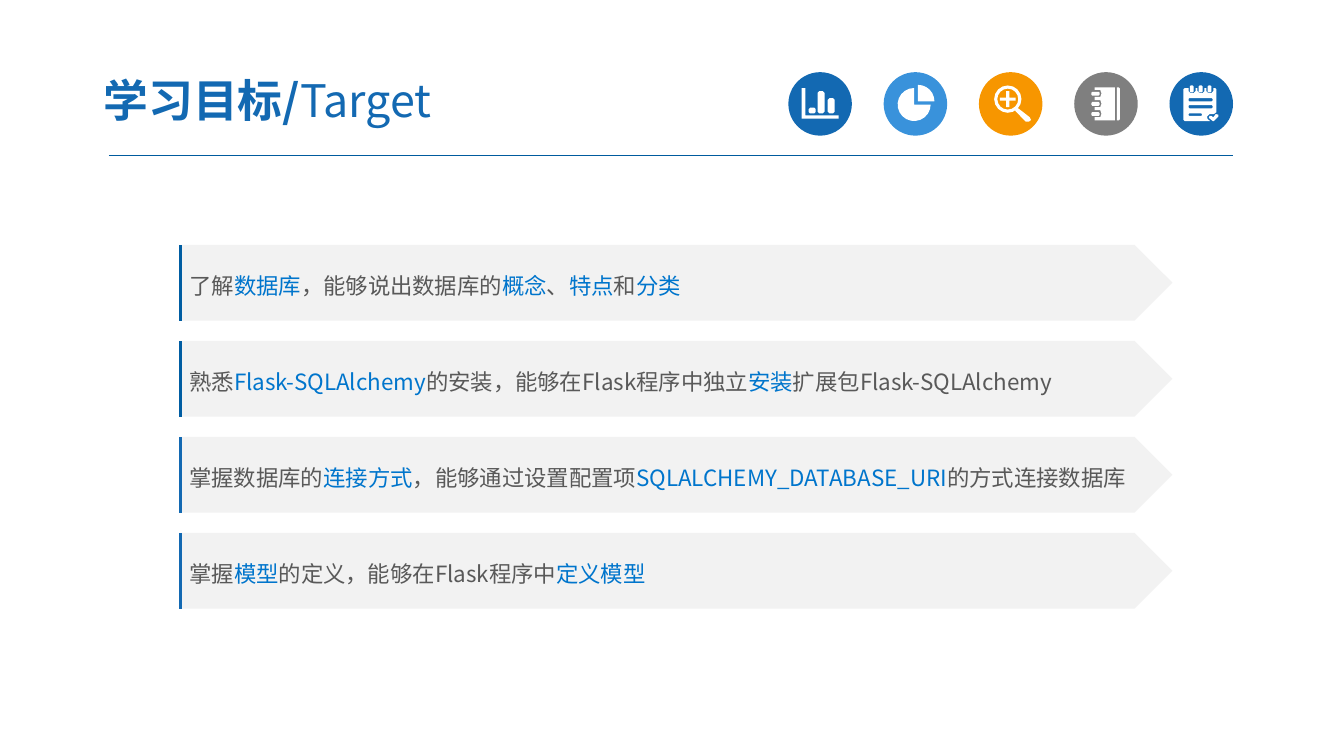
import math
import pptx
import pptx.util
import pptx.dml.color
import pptx.enum.shapes
import pptx.enum.text
import pptx.oxml.ns
import lxml.etree

WIDE = pptx.util.Inches(13.33)
HIGH = pptx.util.Inches(7.5)
FONT = "Noto Sans CJK SC"
BLUE, SKY, GOLD, GREY, WHITE = "1369B2", "3992DB", "F79600", "7F7F7F", "FFFFFF"
KIND = pptx.enum.shapes.MSO_SHAPE

GOALS = [
    ("005DA2", "了解|数据库|，能够说出数据库的|概念|、|特点|和|分类"),
    ("005DA2", "熟悉|Flask-SQLAlchemy|的安装，能够在Flask程序中独立|安装|扩展包Flask-SQLAlchemy"),
    (BLUE, "掌握数据库的|连接方式|，能够通过设置配置项|SQLALCHEMY_DATABASE_URI|的方式连接数据库"),
    (BLUE, "掌握|模型|的定义，能够在Flask程序中|定义模型"),
]


def hue(code):
    return pptx.dml.color.RGBColor.from_string(code)


def across(share):
    return int(WIDE * share / 100)


def down(share):
    return int(HIGH * share / 100)


def bar(x, y, wide, high):
    cut = min(wide, high) / 4
    return [(x + cut, y), (x + wide - cut, y), (x + wide, y + cut),
            (x + wide, y + high - cut), (x + wide - cut, y + high),
            (x + cut, y + high), (x, y + high - cut), (x, y + cut)]


def arc(x, y, reach, start=0, sweep=360, steps=16):
    turns = [math.radians(start + sweep * n / steps) for n in range(steps + 1)]
    return [(x + reach * math.cos(t), y + reach * math.sin(t)) for t in turns]


def chart():
    axis = [(21, 25), (27, 25), (27, 68), (79, 68), (79, 73), (21, 73)]
    return [axis, bar(32, 56, 11, 9), bar(46, 30, 11, 35), bar(62, 41, 11, 24)]


def pie():
    return [arc(48, 51, 26, 0, 270) + [(48, 51)],
            arc(54, 46, 26, 270, 90, 6) + [(54, 46)]]


def lens():
    cross = [(43, 30), (48, 30), (48, 40), (58, 40), (58, 45), (48, 45),
             (48, 55), (43, 55), (43, 45), (33, 45), (33, 40), (43, 40)]
    grip = [(57, 61), (62, 57), (80, 71), (82, 75), (79, 78), (74, 78)]
    return [arc(45.5, 42.5, 21.5), arc(45.5, 42.5, 16.5), cross, grip]


def book():
    rings = [28 + 16 * n for n in range(3)]
    body = [(32, 76), (32, 24)]
    for y in rings:
        body += [(32, y), (41, y), (43, y + 5.5), (41, y + 11), (32, y + 11)]
    cover = body[1:] + [(32, 76), (64, 76), (64, 24)]
    spine = [(67, 24), (70, 24), (72, 26), (72, 74), (70, 76), (67, 76)]
    return [cover, spine] + [bar(27, y + 3, 13, 6) for y in rings]


def note():
    rings = [30 + 14 * n for n in range(3)]
    page = [(22, 27), (24, 25)]
    for x in rings:
        page += [(x, 25), (x, 30), (x + 3, 33), (x + 8, 33), (x + 11, 30), (x + 11, 25)]
    page += [(72, 25), (74, 27), (74, 63), (70, 66), (63, 66), (59, 70),
             (60, 74), (64, 77), (24, 77), (22, 75)]
    heart = [(77, 70), (70, 77), (68, 77), (62, 72), (63, 69), (66, 69),
             (69, 71), (73, 66), (77, 67)]
    rows = [bar(30, 41, 38, 5), bar(30, 52, 38, 5), bar(30, 65, 21, 4)]
    return [page, heart] + rows + [bar(x + 2, 21, 6, 11) for x in rings]


ICONS = [(BLUE, chart), (SKY, pie), (GOLD, lens), (GREY, book), (BLUE, note)]


def paint(item, code):
    item.shadow.inherit = False
    item.fill.solid()
    item.fill.fore_color.rgb = hue(code)
    item.line.fill.background()
    return item


def line(slide, start, end, code, size):
    item = slide.shapes.add_connector(
        pptx.enum.shapes.MSO_CONNECTOR.STRAIGHT,
        across(start[0]), down(start[1]), across(end[0]), down(end[1]))
    item.line.color.rgb = hue(code)
    item.line.width = pptx.util.Pt(size)
    lxml.etree.SubElement(item._element.spPr, pptx.oxml.ns.qn("a:effectLst"))


def write(para, text, code, size, bold=False):
    run = para.add_run()
    run.text = text
    run.font.size = pptx.util.Pt(size)
    run.font.bold = bold
    run.font.color.rgb = hue(code)
    run.font.name = FONT
    east = lxml.etree.SubElement(run.font._element, pptx.oxml.ns.qn("a:ea"))
    east.set("typeface", FONT)


def title(slide):
    head = slide.shapes.title
    head.left, head.top = across(6.72), down(8.4)
    head.width, head.height = across(39.16), down(9.6)
    frame = head.text_frame
    frame.auto_size = pptx.enum.text.MSO_AUTO_SIZE.NONE
    frame.word_wrap = True
    frame.vertical_anchor = pptx.enum.text.MSO_ANCHOR.MIDDLE
    frame.margin_left = frame.margin_right = pptx.util.Inches(0.13)
    frame.margin_top = frame.margin_bottom = pptx.util.Inches(0.07)
    para = frame.paragraphs[0]
    para.alignment = pptx.enum.text.PP_ALIGN.LEFT
    para.space_before = pptx.util.Pt(0)
    write(para, "学习目标/", BLUE, 32, True)
    write(para, "Target", BLUE, 32)


def icon(slide, left, top, size, code, loops):
    home = slide.shapes.add_group_shape().shapes
    paint(home.add_shape(KIND.OVAL, left, top, size, size), code)
    pen = None
    for loop in loops:
        spots = [(left + int(size * x / 100), top + int(size * y / 100))
                 for x, y in loop]
        if pen is None:
            pen = home.build_freeform(*spots[0])
        else:
            pen.move_to(*spots[0])
        pen.add_line_segments(spots[1:], close=True)
    paint(pen.convert_to_shape(), WHITE)


def goal(slide, top, code, text):
    item = paint(slide.shapes.add_shape(
        KIND.PENTAGON, across(13.35), down(top), across(73.89), down(10)), "F2F2F2")
    frame = item.text_frame
    frame.word_wrap = True
    frame.vertical_anchor = pptx.enum.text.MSO_ANCHOR.MIDDLE
    para = frame.paragraphs[0]
    para.alignment = pptx.enum.text.PP_ALIGN.LEFT
    para.line_spacing = 1.2
    for step, part in enumerate(text.split("|")):
        write(para, part, "0075CC" if step % 2 else "595959", 16)
    line(slide, (13.43, top + 10), (13.43, top), code, 1.5)


def main():
    deck = pptx.Presentation()
    deck.slide_width, deck.slide_height = WIDE, HIGH
    slide = deck.slides.add_slide(deck.slide_layouts[5])
    line(slide, (8.1, 20.6), (91.75, 20.6), "005B9E", 0.75)
    for step, (code, draw) in enumerate(ICONS):
        icon(slide, across(58.66 + 7.09 * step), down(9.55), down(8.4), code, draw())
    title(slide)
    for step, (code, text) in enumerate(GOALS):
        goal(slide, 32.4 + 12.7 * step, code, text)
    deck.save("out.pptx")


if __name__ == "__main__":
    main()
